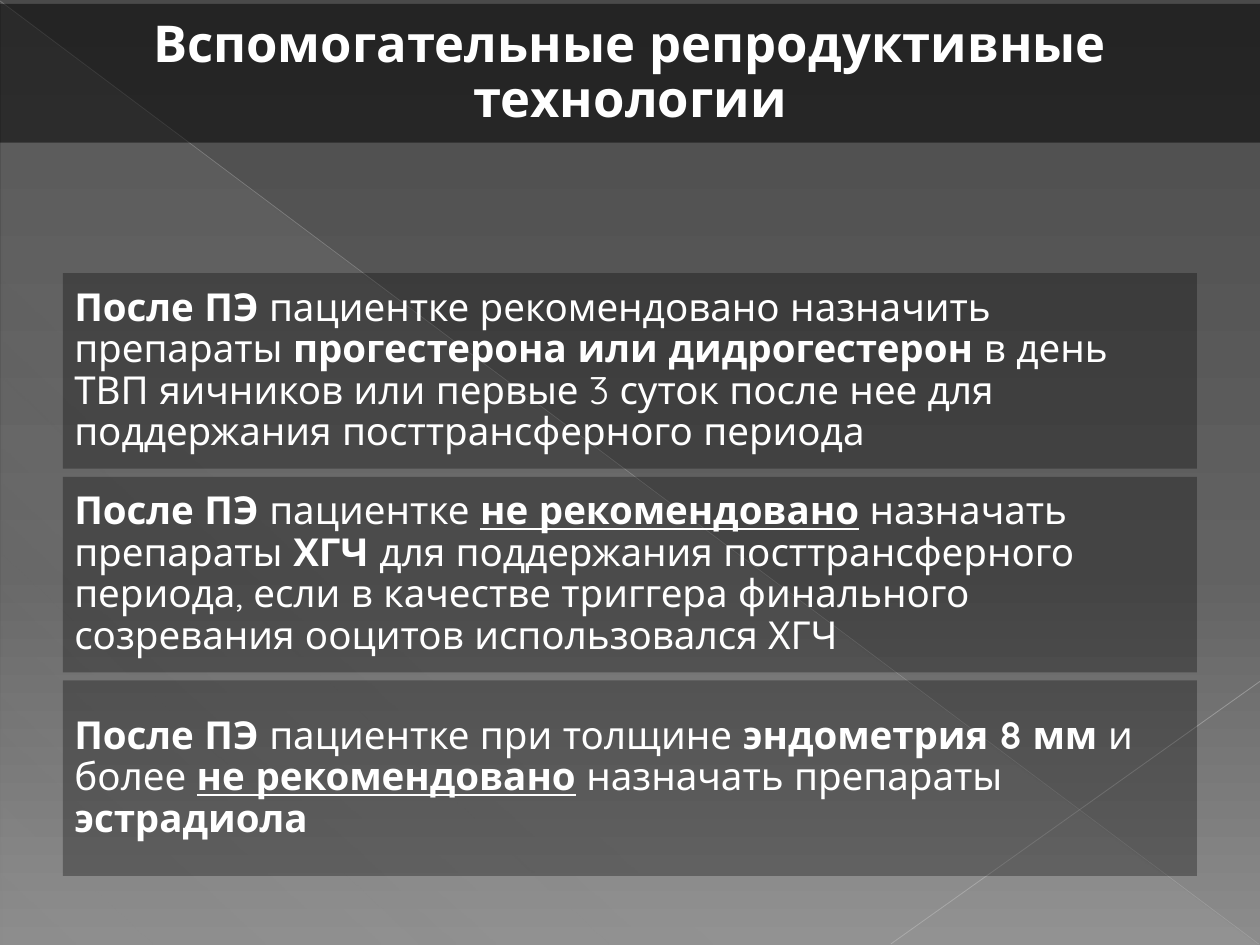
from dataclasses import dataclass

from lxml import etree
from pptx import Presentation
from pptx.dml.color import RGBColor
from pptx.enum.shapes import MSO_CONNECTOR, MSO_SHAPE
from pptx.enum.text import MSO_ANCHOR, MSO_AUTO_SIZE, PP_ALIGN
from pptx.oxml.ns import qn
from pptx.util import Emu, Inches, Pt

RECTANGLE = MSO_SHAPE.RECTANGLE
RIGHT_TRIANGLE = MSO_SHAPE.RIGHT_TRIANGLE
STRAIGHT = MSO_CONNECTOR.STRAIGHT
MIDDLE = MSO_ANCHOR.MIDDLE
NO_AUTOFIT = MSO_AUTO_SIZE.NONE
LEFT, CENTER = PP_ALIGN.LEFT, PP_ALIGN.CENTER

FONT = "Quicksand"
WHITE, BLACK = "FFFFFF", "000000"
WIDTH, HEIGHT = Inches(10), Inches(7.5)
PANEL_LEFT, PANEL_WIDTH = 0.05, 0.9
PANEL_TOP, PANEL_HEIGHT, PANEL_PITCH = 0.289, 0.207, 0.2155


@dataclass(frozen=True)
class Segment:
    text: str
    bold: bool = False
    underline: bool = False


@dataclass(frozen=True)
class Ray:
    start: tuple[float, float]
    end: tuple[float, float]
    color: str
    width: float
    opacity: int


@dataclass(frozen=True)
class Stop:
    position: int
    color: str
    opacity: int = 100


TITLE = [Segment("Вспомогательные репродуктивные технологии", True)]
PANELS = [
    [
        Segment("После ПЭ", True),
        Segment(" пациентке рекомендовано назначить препараты "),
        Segment("прогестерона или дидрогестерон ", True),
        Segment("в день ТВП яичников или первые 3 суток после нее для "
                "поддержания посттрансферного периода"),
    ],
    [
        Segment("После ПЭ ", True),
        Segment("пациентке "),
        Segment("не рекомендовано", True, True),
        Segment(" назначать препараты"),
        Segment(" ХГЧ ", True),
        Segment("для поддержания посттрансферного периода, если в качестве "
                "триггера финального созревания ооцитов использовался ХГЧ"),
    ],
    [
        Segment("После ПЭ ", True),
        Segment("пациентке при толщине "),
        Segment("эндометрия 8 мм ", True),
        Segment("и более "),
        Segment("не рекомендовано", True, True),
        Segment(" назначать препараты "),
        Segment("эстрадиола", True),
    ],
]
RAYS = [
    Ray((0, 0.001), (0.999, 0.999), "BFBFBF", 0.39, 35),
    Ray((1, 0.721), (0.707, 0.999), "C6C6C6", 0.47, 45),
]
BACKGROUND = [Stop(0, "4A4A4A"), Stop(60, "626262"), Stop(100, "8C8C8C")]
SHEEN = [Stop(0, "D2D2D2", 10), Stop(70, "D2D2D2", 8), Stop(100, "D2D2D2", 1)]


def rgb(color: str) -> RGBColor:
    return RGBColor.from_string(color)


def across(share: float) -> Emu:
    return Emu(round(WIDTH * share))


def down(share: float) -> Emu:
    return Emu(round(HEIGHT * share))


def set_opacity(parent, opacity: int) -> None:
    color = next(parent.iter(qn("a:srgbClr")))
    etree.SubElement(color, qn("a:alpha"), val=str(opacity * 1000))


def set_gradient(parent, stops: list[Stop], angle: int) -> None:
    gradient = etree.Element(qn("a:gradFill"), rotWithShape="1")
    stop_list = etree.SubElement(gradient, qn("a:gsLst"))
    for stop in stops:
        entry = etree.SubElement(stop_list, qn("a:gs"), pos=str(stop.position * 1000))
        etree.SubElement(entry, qn("a:srgbClr"), val=stop.color)
        set_opacity(entry, stop.opacity)
    etree.SubElement(gradient, qn("a:lin"), ang=str(angle * 60000), scaled="0")
    parent.replace(parent.find(qn("a:solidFill")), gradient)


def fill_black(shape, opacity: int) -> None:
    shape.fill.solid()
    shape.fill.fore_color.rgb = rgb(BLACK)
    set_opacity(shape.element.spPr, opacity)
    shape.line.fill.background()


def write(shape, segments: list[Segment], size: int, inset: float, alignment) -> None:
    frame = shape.text_frame
    frame.word_wrap = True
    frame.auto_size = NO_AUTOFIT
    frame.vertical_anchor = MIDDLE
    frame.margin_left = frame.margin_right = Inches(inset)
    frame.margin_top = frame.margin_bottom = Inches(inset)
    paragraph = frame.paragraphs[0]
    paragraph.alignment = alignment
    paragraph.line_spacing = 0.9
    for segment in segments:
        run = paragraph.add_run()
        run.text = segment.text
        run.font.name = FONT
        run.font.size = Pt(size)
        run.font.bold = segment.bold
        run.font.underline = segment.underline
        run.font.color.rgb = rgb(WHITE)


def draw_ray(slide, ray: Ray) -> None:
    connector = slide.shapes.add_connector(
        STRAIGHT, across(ray.start[0]), down(ray.start[1]),
        across(ray.end[0]), down(ray.end[1]))
    connector.line.color.rgb = rgb(ray.color)
    connector.line.width = Pt(ray.width)
    properties = connector.element.spPr
    set_opacity(properties, ray.opacity)
    etree.SubElement(properties, qn("a:effectLst"))


def draw_backdrop(slide) -> None:
    slide.background.fill.solid()
    set_gradient(next(slide.element.iter(qn("p:bgPr"))), BACKGROUND, 90)
    triangle = slide.shapes.add_shape(
        RIGHT_TRIANGLE, across(0.001), down(0.002), across(0.998), down(0.998))
    triangle.shadow.inherit = False
    triangle.line.fill.background()
    triangle.fill.solid()
    set_gradient(triangle.element.spPr, SHEEN, 133)
    for ray in RAYS:
        draw_ray(slide, ray)


def draw_panel(slide, row: int, segments: list[Segment]) -> None:
    panel = slide.shapes.add_shape(
        RECTANGLE, across(PANEL_LEFT), down(PANEL_TOP + row * PANEL_PITCH),
        across(PANEL_WIDTH), down(PANEL_HEIGHT))
    panel.shadow.inherit = False
    fill_black(panel, 30)
    write(panel, segments, 22, 0.09, LEFT)


def draw_title(slide) -> None:
    title = slide.shapes.title
    title.left, title.top = across(0), down(0.004)
    title.width, title.height = across(1), down(0.147)
    fill_black(title, 50)
    write(title, TITLE, 29, 0.12, CENTER)
    slide.shapes.element.append(title.element)


def main() -> None:
    presentation = Presentation()
    presentation.slide_width, presentation.slide_height = WIDTH, HEIGHT
    slide = presentation.slides.add_slide(presentation.slide_layouts[5])
    draw_backdrop(slide)
    for row, segments in enumerate(PANELS):
        draw_panel(slide, row, segments)
    draw_title(slide)
    presentation.save("out.pptx")


if __name__ == "__main__":
    main()
